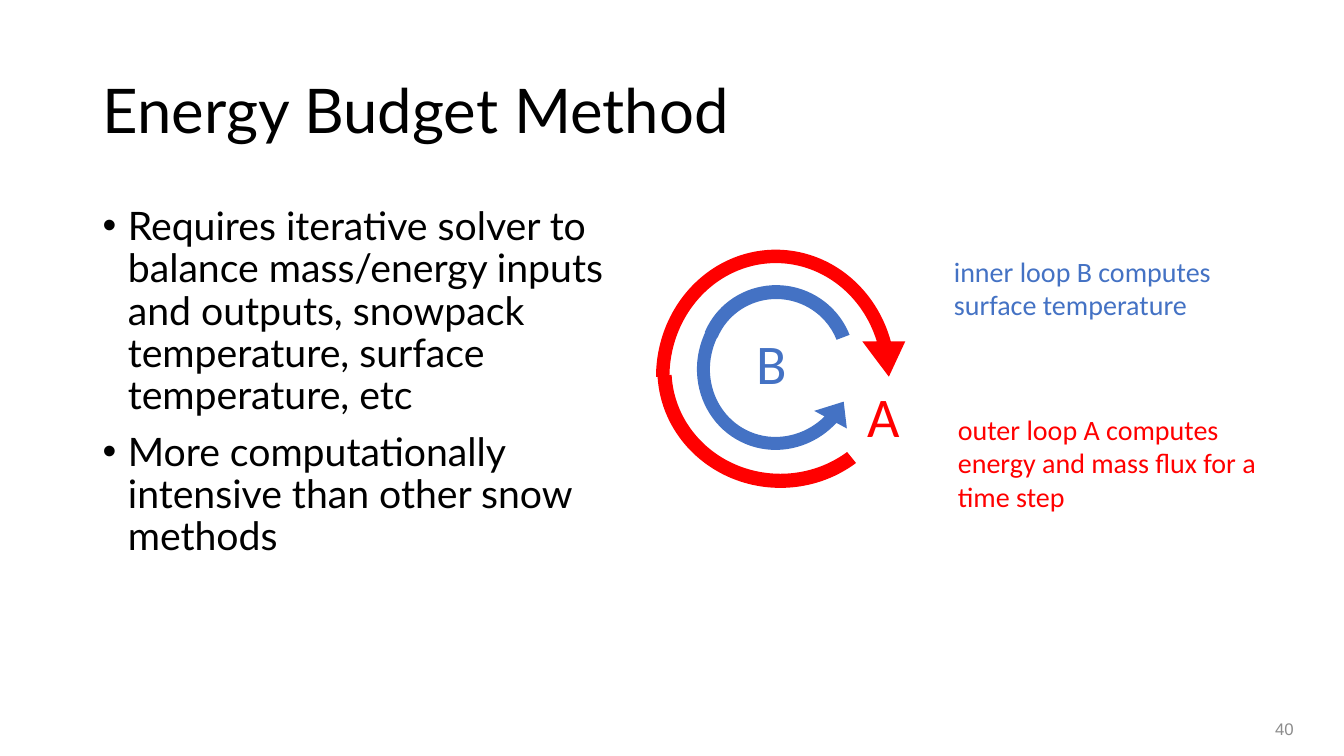
from dataclasses import dataclass

from lxml import etree
from pptx import Presentation
from pptx.dml.color import RGBColor
from pptx.enum.shapes import MSO_SHAPE
from pptx.enum.text import MSO_ANCHOR, MSO_AUTO_SIZE, PP_ALIGN
from pptx.oxml.ns import qn
from pptx.slide import Slide
from pptx.util import Inches, Pt

ARROW = MSO_SHAPE.CIRCULAR_ARROW
ARC = MSO_SHAPE.BLOCK_ARC
TOP, MIDDLE = MSO_ANCHOR.TOP, MSO_ANCHOR.MIDDLE
LEFT, CENTER = PP_ALIGN.LEFT, PP_ALIGN.CENTER
FIT = MSO_AUTO_SIZE.SHAPE_TO_FIT_TEXT

BLACK = RGBColor(0x00, 0x00, 0x00)
GRAY = RGBColor(0x8C, 0x8C, 0x8C)
BLUE = RGBColor(0x44, 0x72, 0xC4)
RED = RGBColor(0xFF, 0x00, 0x00)

Box = tuple[float, float, float, float]


@dataclass(frozen=True)
class Text:
    box: Box
    lines: tuple[str, ...]
    size: int
    color: RGBColor
    font: str = "Calibri"
    anchor: MSO_ANCHOR = TOP
    align: PP_ALIGN = LEFT
    spacing: float = 1.0
    bullet: bool = False
    label: bool = False


@dataclass(frozen=True)
class Curve:
    kind: MSO_SHAPE
    box: Box
    color: RGBColor
    adjust: tuple[float, ...]
    turn: float = 0
    flip: bool = False


CURVES = [
    Curve(ARROW, (6.8, 2.68, 1.84, 1.91), BLUE,
          (0.07, 10.32, 204.55, 108, 0.1), 206.5, True),
    Curve(ARC, (6.93, 2.83, 1.55, 1.53), BLUE, (131.76, 213.73, 0.09), 18.9, True),
    Curve(ARROW, (6.36, 2.33, 2.67, 2.82), RED, (0.05, 10.89, 205.03, 108, 0.08)),
    Curve(ARC, (6.52, 2.5, 2.44, 2.34), RED, (138.53, 214.44, 0.06), 180),
]

TEXTS = [
    Text((0.92, 0.4, 11.5, 1.45), ("Energy Budget Method",), 44, BLACK,
         "Lato", anchor=MIDDLE, spacing=0.9),
    Text((0.92, 2, 5.49, 4.76),
         ("Requires iterative solver to balance mass/energy inputs and outputs, "
          "snowpack temperature, surface temperature, etc",
          "More computationally intensive than other snow methods"),
         28, BLACK, "Lato", spacing=0.9, bullet=True),
    Text((12.3, 7.06, 0.88, 0.35), ("40",), 12, GRAY, "Arial", MIDDLE, CENTER),
    Text((9.32, 2.45, 3.02, 0.81), ("inner loop B computes surface temperature",),
         20, BLUE, label=True),
    Text((7.36, 3.19, 0.44, 0.81), ("B",), 40, BLUE, label=True),
    Text((8.46, 3.71, 0.44, 0.81), ("A",), 40, RED, label=True),
    Text((9.36, 4.02, 3.31, 1.15),
         ("outer loop A computes energy and mass flux for a time step",),
         20, RED, label=True),
]


def draw_curve(slide: Slide, curve: Curve) -> None:
    shape = slide.shapes.add_shape(curve.kind, *map(Inches, curve.box))
    shape.shadow.inherit = False
    shape.fill.solid()
    shape.fill.fore_color.rgb = curve.color
    shape.line.fill.background()
    shape.rotation = curve.turn
    if curve.flip:
        shape._element.spPr.xfrm.set("flipH", "1")
    for index, value in enumerate(curve.adjust):
        shape.adjustments[index] = value


def draw_text(slide: Slide, text: Text) -> None:
    frame = slide.shapes.add_textbox(*map(Inches, text.box)).text_frame
    frame.word_wrap = True
    frame.vertical_anchor = text.anchor
    if text.label:
        frame.auto_size = FIT
        frame.margin_left = frame.margin_right = Inches(0.14)
        frame.margin_top = frame.margin_bottom = Inches(0.07)
    for index, line in enumerate(text.lines):
        para = frame.add_paragraph() if index else frame.paragraphs[0]
        para.text = line
        para.alignment = text.align
        para.line_spacing = text.spacing
        if index:
            para.space_before = Pt(10)
        if text.bullet:
            props = para._p.get_or_add_pPr()
            props.set("marL", str(Inches(0.25)))
            props.set("indent", str(Inches(-0.25)))
            etree.SubElement(props, qn("a:buFont")).set("typeface", "Arial")
            etree.SubElement(props, qn("a:buChar")).set("char", "•")
        para.font.name = text.font
        para.font.size = Pt(text.size)
        para.font.color.rgb = text.color


def main() -> None:
    deck = Presentation()
    deck.slide_width = Inches(13.33)
    deck.slide_height = Inches(7.5)
    slide = deck.slides.add_slide(deck.slide_layouts[6])
    for curve in CURVES:
        draw_curve(slide, curve)
    for text in TEXTS:
        draw_text(slide, text)
    deck.save("out.pptx")


if __name__ == "__main__":
    main()
